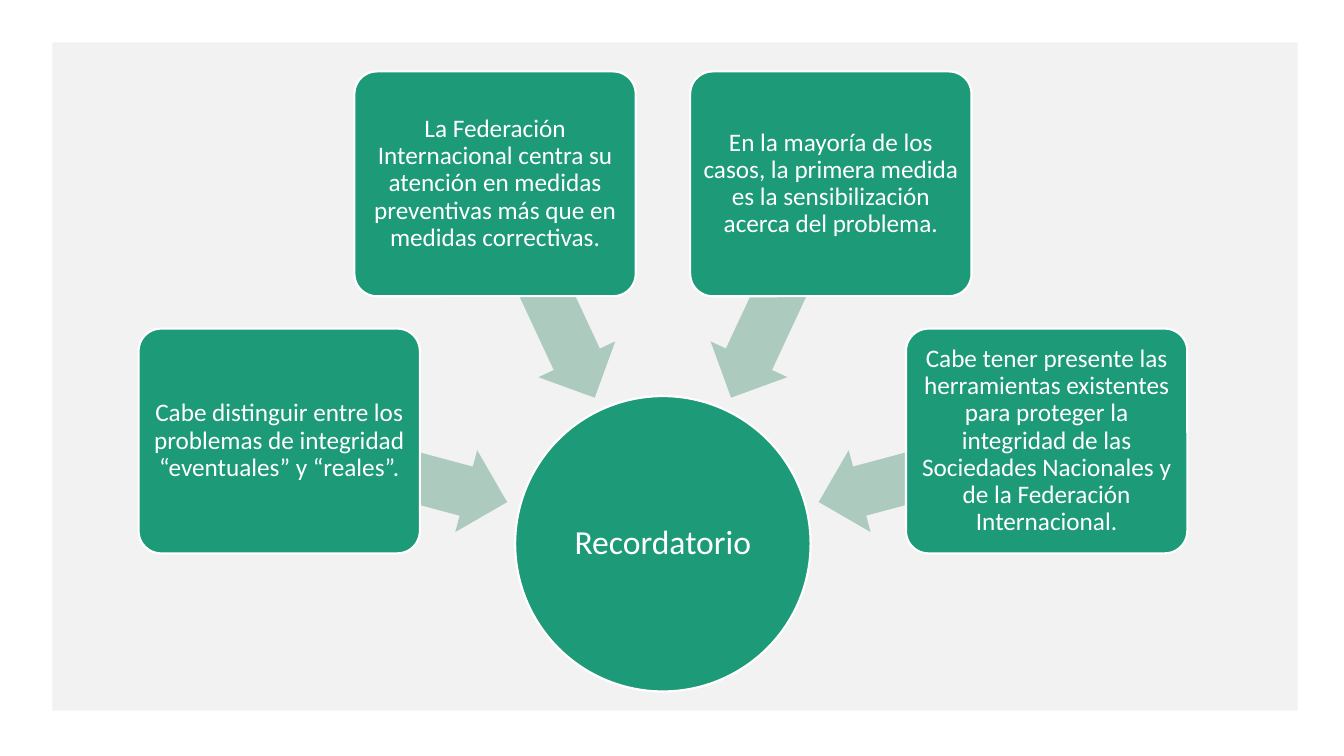
import math

import pptx
import pptx.dml.color
import pptx.enum.shapes
import pptx.enum.text
import pptx.util

Inches = pptx.util.Inches
Shape = pptx.enum.shapes.MSO_SHAPE

COLOURS = {"panel": "F2F2F2", "green": "1D9A78", "arrow": "ACCABE", "white": "FFFFFF"}
FONT = "Calibri"
HUB = "Recordatorio"
REMINDERS = [
    "Cabe distinguir entre los problemas de integridad “eventuales” y “reales”.",
    "La Federación Internacional centra su atención en medidas preventivas más que en medidas correctivas.",
    "En la mayoría de los casos, la primera medida es la sensibilización acerca del problema.",
    "Cabe tener presente las herramientas existentes para proteger la integridad de las "
    "Sociedades Nacionales y de la Federación Internacional.",
]
FIRST_ANGLE, ANGLE_STEP = 195, 50
BOX_RADIUS, ARROW_RADIUS = 3.94, 2.77
HUB_SIZE = (2.93, 2.93)
BOX_SIZE = (2.79, 2.23)
ARROW_SIZE = (2.34, 0.84)


def colour(name):
    """Return the named colour of the palette."""
    return pptx.dml.color.RGBColor.from_string(COLOURS[name])


def add_centred(shapes, kind, centre, size, fill, outlined=False):
    """Add a filled shape around a centre point."""
    left, top = centre[0] - size[0] / 2, centre[1] - size[1] / 2
    shape = shapes.add_shape(kind, Inches(left), Inches(top), Inches(size[0]), Inches(size[1]))
    shape.shadow.inherit = False
    shape.fill.solid()
    shape.fill.fore_color.rgb = colour(fill)
    if outlined:
        shape.line.color.rgb = colour("white")
        shape.line.width = pptx.util.Pt(1.5)
    else:
        shape.line.fill.background()
    return shape


def write_text(shape, text, size, inset):
    """Write centred white text inside a shape."""
    frame = shape.text_frame
    frame.word_wrap = True
    frame.vertical_anchor = pptx.enum.text.MSO_ANCHOR.MIDDLE
    frame.margin_left = frame.margin_right = Inches(inset)
    frame.margin_top = frame.margin_bottom = Inches(inset)
    para = frame.paragraphs[0]
    para.alignment = pptx.enum.text.PP_ALIGN.CENTER
    para.line_spacing = 0.9
    span = para.add_run()
    span.text = text
    span.font.name = FONT
    span.font.size = pptx.util.Pt(size)
    span.font.color.rgb = colour("white")


def on_circle(centre, radius, angle):
    """Return the point at a clockwise angle around a centre."""
    turn = math.radians(angle)
    return centre[0] + radius * math.cos(turn), centre[1] + radius * math.sin(turn)


def add_panel(page, left, top, width, height):
    """Draw the grey panel behind the diagram."""
    centre = left + width / 2, top + height / 2
    add_centred(page.shapes, Shape.RECTANGLE, centre, (width, height), "panel")


def add_diagram(page, left, top, width, height):
    """Draw the hub at the foot of the box and the reminders that point to it."""
    group = page.shapes.add_group_shape()
    centre = left + width / 2, top + height - HUB_SIZE[1] / 2
    hub = add_centred(group.shapes, Shape.OVAL, centre, HUB_SIZE, "green", outlined=True)
    write_text(hub, HUB, size=24, inset=0.02)
    for index, text in enumerate(REMINDERS):
        angle = FIRST_ANGLE + index * ANGLE_STEP
        spot = on_circle(centre, ARROW_RADIUS, angle)
        arrow = add_centred(group.shapes, Shape.LEFT_ARROW, spot, ARROW_SIZE, "arrow")
        arrow.adjustments[0], arrow.adjustments[1] = 0.6, 0.5
        arrow.rotation = angle
        spot = on_circle(centre, BOX_RADIUS, angle)
        box = add_centred(group.shapes, Shape.ROUNDED_RECTANGLE, spot, BOX_SIZE, "green", outlined=True)
        box.adjustments[0] = 0.1
        write_text(box, text, size=18, inset=0.04)


def main():
    """Build the slide and save it."""
    deck = pptx.Presentation()
    deck.slide_width, deck.slide_height = Inches(13.33), Inches(7.5)
    page = deck.slides.add_slide(deck.slide_layouts[6])
    add_panel(page, 0.52, 0.42, 12.35, 6.63)
    add_diagram(page, 1.37, 0.71, 10.41, 6.15)
    deck.save("out.pptx")


if __name__ == "__main__":
    main()
